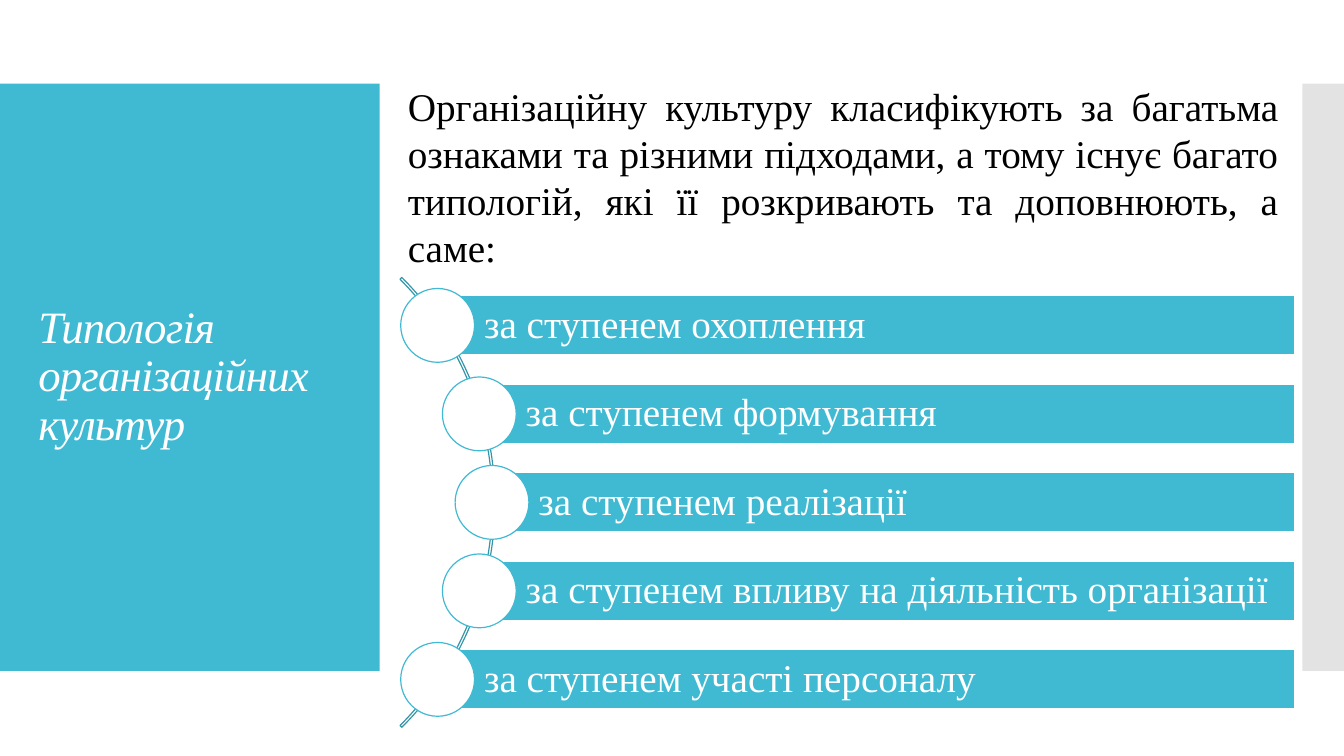
from math import sqrt

from lxml import etree
from pptx import Presentation
from pptx.dml.color import RGBColor
from pptx.enum.shapes import MSO_SHAPE as SHAPE
from pptx.enum.text import MSO_ANCHOR as ANCHOR, PP_ALIGN as ALIGN
from pptx.oxml.ns import qn
from pptx.util import Cm, Pt

COLORS = {"teal": "40BAD2", "arc": "3395A8", "grey": "C8C8C8",
          "white": "FFFFFF", "black": "000000"}
FONT = "Times New Roman"
TITLE = "Типологія організаційних культур"
INTRO = ("Організаційну культуру класифікують за багатьма ознаками та різними "
         "підходами, а тому існує багато типологій, які її розкривають та "
         "доповнюють, а саме:")
CRITERIA = ["за ступенем охоплення",
            "за ступенем формування",
            "за ступенем реалізації",
            "за ступенем впливу на діяльність організації",
            "за ступенем участі персоналу"]


def rgb(name):
    return RGBColor.from_string(COLORS[name])


def add_shape(slide, kind, box, fill=None, line=None):
    """Add a preset shape in a box of centimetres: left, top, width, height."""
    sp = slide.shapes.add_shape(kind, *map(Cm, box))
    sp.shadow.inherit = False
    if fill:
        sp.fill.solid()
        sp.fill.fore_color.rgb = rgb(fill)
    else:
        sp.fill.background()
    if line:
        sp.line.color.rgb = rgb(line)
        sp.line.width = Pt(0.85)
    else:
        sp.line.fill.background()
    return sp


def write(tf, text, size, color, align=ALIGN.LEFT, spacing=None):
    """Fill a text frame with one formatted paragraph and return its run."""
    tf.text = text
    tf.word_wrap = True
    p = tf.paragraphs[0]
    p.alignment = align
    p.line_spacing = spacing
    r = p.runs[0]
    r.font.name = FONT
    r.font.size = Pt(size)
    r.font.color.rgb = rgb(color)
    return r


def add_title_panel(slide, left, top, width, height):
    panel = add_shape(slide, SHAPE.RECTANGLE, (left, top, width, height), "teal")
    title = slide.shapes.title
    panel.element.addnext(title.element)
    title.left, title.top = Cm(left + 0.71), Cm(top + 1.02)
    title.width, title.height = Cm(width - 1.4), Cm(height - 2.04)
    title.text_frame.vertical_anchor = ANCHOR.MIDDLE
    r = write(title.text_frame, TITLE, 32, "white", spacing=0.9)
    r.font.italic = True
    r.font._element.set("spc", "-60")


def add_side_strip(slide, left, top, width, height):
    strip = add_shape(slide, SHAPE.RECTANGLE, (left, top, width, height), "grey")
    color = strip.fill._xPr.find(qn("a:solidFill"))[0]
    etree.SubElement(color, qn("a:alpha"), val="50000")


def add_intro(slide, left, top, width, height):
    tb = slide.shapes.add_textbox(Cm(left), Cm(top), Cm(width), Cm(height))
    write(tb.text_frame, INTRO, 28, "black", ALIGN.JUSTIFY)


def add_curved_list(slide, center_x, center_y, right, pitch=2.23):
    """Place bars and circles along an arc around the given centre."""
    arc_size, orbit, bar_height, circle = 16.03, 7.94, 1.49, 1.86
    arc = add_shape(slide, SHAPE.BLOCK_ARC,
                    (center_x - arc_size / 2, center_y - arc_size / 2,
                     arc_size, arc_size), line="arc")
    for i, value in enumerate((189, 27, 0.004)):
        arc.adjustments[i] = value

    for i, text in enumerate(CRITERIA):
        dy = (i - (len(CRITERIA) - 1) / 2) * pitch
        x, y = center_x + sqrt(orbit ** 2 - dy ** 2), center_y + dy
        bar = add_shape(slide, SHAPE.RECTANGLE,
                        (x, y - bar_height / 2, right - x, bar_height),
                        "teal", "white")
        tf = bar.text_frame
        tf.margin_left = Cm(1.17)
        tf.margin_top = tf.margin_right = tf.margin_bottom = Cm(0.2)
        tf.vertical_anchor = ANCHOR.MIDDLE
        write(tf, text, 28, "white", spacing=0.9)
        add_shape(slide, SHAPE.OVAL,
                  (x - circle / 2, y - circle / 2, circle, circle),
                  "white", "teal")


def main():
    prs = Presentation()
    prs.slide_width, prs.slide_height = Cm(33.87), Cm(19.05)
    slide = prs.slides.add_slide(prs.slide_layouts[5])
    add_title_panel(slide, 0, 2.11, 9.57, 14.8)
    add_side_strip(slide, 32.82, 2.11, 1.05, 14.8)
    add_intro(slide, 10.03, 1.95, 22.43, 4.9)
    add_curved_list(slide, 4.46, 12.66, right=32.62)
    prs.save("out.pptx")


if __name__ == "__main__":
    main()
